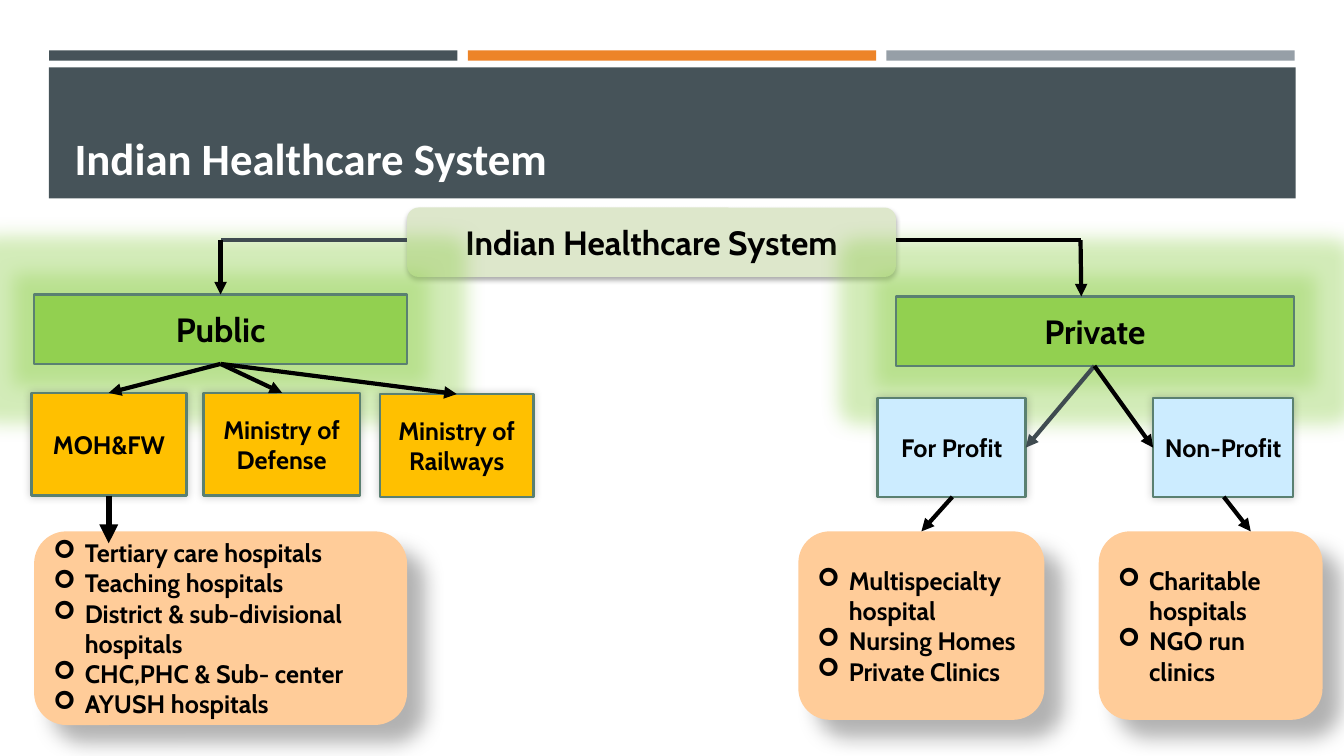
"""Build the Indian Healthcare System slide."""
from lxml.etree import SubElement
from pptx import Presentation
from pptx.dml.color import RGBColor
from pptx.enum.shapes import MSO_CONNECTOR, MSO_SHAPE
from pptx.enum.text import MSO_ANCHOR, PP_ALIGN
from pptx.oxml.ns import qn
from pptx.util import Cm, Pt

HUES = {
    "slate": "465359", "orange": "ED8428", "gray": "969FA7", "white": "FFFFFF",
    "black": "000000", "sage": "DDE7CB", "green": "92D050", "edge": "5A8071",
    "peach": "FFCC99", "gold": "FFC000", "sky": "CCECFF", "dim": "3F4B50",
}
SOFT = (32, 3.5, 2.2, 90)
DEEP = (30, 15, 18, 45)
LEFT = (20, 6, 0, 225)
RIGHT = (20, 6, 0, 315)


def hue(name):
    return RGBColor.from_string(HUES[name])


def add_tint(effect, name, alpha):
    tint = SubElement(effect, qn("a:srgbClr"), val=HUES[name])
    SubElement(tint, qn("a:alpha"), val=str(alpha * 1000))


def add_shade(shape, shade):
    alpha, blur, dist, angle = shade
    effects = shape._element.spPr.find(qn("a:effectLst"))
    effect = SubElement(
        effects, qn("a:outerShdw"), blurRad=str(Pt(blur)), dist=str(Pt(dist)),
        dir=str(angle * 60000), algn="ctr", rotWithShape="0")
    add_tint(effect, "black", alpha)


def add_glow(shape):
    effects = shape._element.spPr.find(qn("a:effectLst"))
    effect = SubElement(effects, qn("a:glow"), rad=str(Pt(28)))
    add_tint(effect, "green", 40)


def add_box(slide, kind, spot, fill, edge=None, shade=None):
    shape = slide.shapes.add_shape(kind, *map(Cm, spot))
    shape.fill.solid()
    shape.fill.fore_color.rgb = hue(fill)
    if edge:
        shape.line.color.rgb = hue(edge)
        shape.line.width = Pt(1.75)
    else:
        shape.line.fill.background()
    shape.shadow.inherit = False
    if shade:
        add_shade(shape, shade)
    return shape


def add_run(para, text, size, font="Cabin", color="black"):
    run = para.add_run()
    run.text = text
    run.font.size = Pt(size)
    run.font.name = font
    run.font.bold = True
    run.font.color.rgb = hue(color)


def add_label(shape, text, size):
    frame = shape.text_frame
    frame.word_wrap = True
    frame.vertical_anchor = MSO_ANCHOR.MIDDLE
    para = frame.paragraphs[0]
    para.alignment = PP_ALIGN.CENTER
    add_run(para, text, size)


def add_title(slide, text):
    frame = slide.shapes.add_textbox(Cm(1.63), Cm(1.96), Cm(30.63), Cm(2.82)).text_frame
    frame.word_wrap = True
    frame.vertical_anchor = MSO_ANCHOR.BOTTOM
    add_run(frame.paragraphs[0], text, 32, "Calibri", "white")


def add_card(slide, spot, items):
    card = add_box(slide, MSO_SHAPE.ROUNDED_RECTANGLE, spot, "peach", shade=DEEP)
    frame = card.text_frame
    frame.word_wrap = True
    frame.vertical_anchor = MSO_ANCHOR.MIDDLE
    for index, item in enumerate(items):
        para = frame.add_paragraph() if index else frame.paragraphs[0]
        para.alignment = PP_ALIGN.LEFT
        props = para._p.get_or_add_pPr()
        props.set("marL", str(Cm(0.79)))
        props.set("indent", str(-Cm(0.79)))
        SubElement(props, qn("a:buFont"), typeface="Wingdings")
        SubElement(props, qn("a:buChar"), char="➢")
        add_run(para, item, 18)


def add_line(slide, start, end, color="black", width=3, arrow=True):
    line = slide.shapes.add_connector(
        MSO_CONNECTOR.STRAIGHT, *map(Cm, (*start, *end)))
    line.line.color.rgb = hue(color)
    line.line.width = Pt(width)
    if arrow:
        SubElement(line.line._get_or_add_ln(), qn("a:tailEnd"), type="triangle")
    SubElement(line._element.spPr, qn("a:effectLst"))


def add_header(slide):
    for index, fill in enumerate(("slate", "orange", "gray")):
        add_box(slide, MSO_SHAPE.RECTANGLE,
                (1.24 + index * 10.55, 1.27, 10.29, 0.26), fill)
    add_box(slide, MSO_SHAPE.RECTANGLE, (1.23, 1.7, 31.42, 3.3), "slate")
    add_title(slide, "Indian Healthcare System")


def add_nodes(slide):
    root = add_box(slide, MSO_SHAPE.ROUNDED_RECTANGLE,
                   (10.26, 5.23, 12.32, 1.75), "sage", shade=SOFT)
    add_label(root, "Indian Healthcare System", 24)
    for text, spot in (("Public", (0.86, 7.42, 9.4, 1.75)),
                       ("Private", (22.58, 7.47, 10.03, 1.75))):
        sector = add_box(slide, MSO_SHAPE.RECTANGLE, spot, "green", "edge")
        add_glow(sector)
        add_label(sector, text, 24)
    add_card(slide, (27.69, 13.39, 5.64, 4.75),
             ("Charitable hospitals", "NGO run clinics"))
    add_card(slide, (20.12, 13.39, 6.2, 4.75),
             ("Multispecialty hospital", "Nursing Homes", "Private Clinics"))
    add_card(slide, (0.86, 13.39, 9.4, 4.88),
             ("Tertiary care hospitals", "Teaching hospitals",
              "District & sub-divisional hospitals",
              "CHC,PHC & Sub- center", "AYUSH hospitals"))
    process = MSO_SHAPE.FLOWCHART_PROCESS
    for text, kind, spot, fill, shade in (
        ("MOH&FW", MSO_SHAPE.RECTANGLE, (0.79, 9.9, 3.91, 2.59), "gold", LEFT),
        ("Ministry of Defense", process, (5.13, 9.9, 3.94, 2.59), "gold", LEFT),
        ("Ministry of Railways", process, (9.58, 9.93, 3.86, 2.59), "gold", LEFT),
        ("For Profit", process, (22.12, 10.03, 3.73, 2.49), "sky", RIGHT),
        ("Non-Profit", process, (29.06, 10.03, 3.53, 2.49), "sky", RIGHT),
    ):
        add_label(add_box(slide, kind, spot, fill, "edge", shade), text, 18)


def add_links(slide):
    add_line(slide, (10.26, 6.05), (5.56, 6.05), "dim", arrow=False)
    add_line(slide, (5.56, 6.05), (5.56, 7.42))
    add_line(slide, (22.58, 6.05), (27.23, 6.05), arrow=False)
    add_line(slide, (27.23, 6.05), (27.25, 7.47))
    for end in ((2.74, 9.9), (7.11, 9.9), (11.51, 9.93)):
        add_line(slide, (5.56, 9.17), end)
    add_line(slide, (2.74, 12.49), (2.74, 13.69), width=4.5)
    add_line(slide, (27.58, 9.22), (25.85, 11.28), "dim")
    add_line(slide, (27.58, 9.22), (29.06, 11.28))
    add_line(slide, (24, 12.52), (23.22, 13.39))
    add_line(slide, (30.84, 12.52), (31.52, 13.39))


def main():
    deck = Presentation()
    deck.slide_width = Cm(33.87)
    deck.slide_height = Cm(19.05)
    slide = deck.slides.add_slide(deck.slide_layouts[6])
    add_header(slide)
    add_nodes(slide)
    add_links(slide)
    deck.save("out.pptx")


if __name__ == "__main__":
    main()
